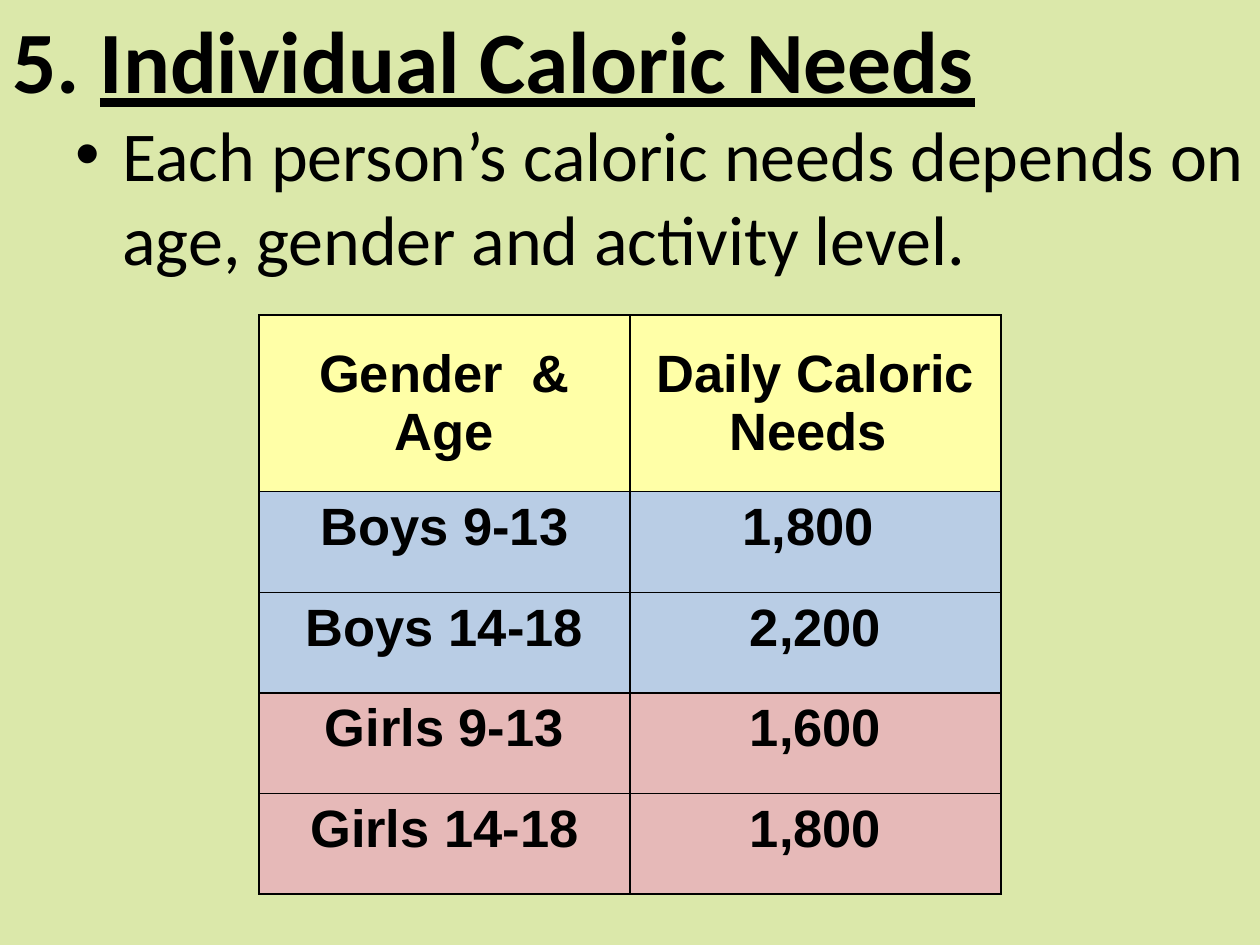
import pptx
import pptx.util
import pptx.dml.color
import pptx.enum.text
import pptx.oxml
import pptx.oxml.ns

Cm = pptx.util.Cm
Pt = pptx.util.Pt
RGB = pptx.dml.color.RGBColor
BLACK = RGB(0, 0, 0)
GREEN = RGB(0xDB, 0xE8, 0xAA)
YELLOW = RGB(0xFF, 0xFF, 0xA7)
BLUE = RGB(0xB9, 0xCD, 0xE5)
PINK = RGB(0xE6, 0xB9, 0xB8)
NS = pptx.oxml.ns.nsdecls("a")


def style(font, form):
    for key, val in form.items():
        setattr(font, key, val)
    font.color.rgb = BLACK


def border(cell):
    props = cell._tc.get_or_add_tcPr()
    for at, side in enumerate(("lnL", "lnR", "lnT", "lnB")):
        line = pptx.oxml.parse_xml(
            f'<a:{side} {NS} w="{Pt(1)}"><a:solidFill>'
            f'<a:srgbClr val="{BLACK}"/></a:solidFill></a:{side}>')
        props.insert(at, line)


# Slide
deck = pptx.Presentation()
deck.slide_width, deck.slide_height = Cm(25.4), Cm(19.05)
slide = deck.slides.add_slide(deck.slide_layouts[6])
slide.background.fill.solid()
slide.background.fill.fore_color.rgb = GREEN

# Heading and bullet
box = slide.shapes.add_textbox(Cm(0), Cm(0), Cm(25.4), Cm(5.82))
frame = box.text_frame
frame.word_wrap = True
head = {"name": "Calibri", "size": Pt(50), "bold": True}
body = {"name": "Calibri", "size": Pt(40), "bold": False}

title = frame.paragraphs[0]
for text, line in (("5. ", False), ("Individual Caloric Needs", True)):
    run = title.add_run()
    run.text = text
    style(run.font, head | {"underline": line})

point = frame.add_paragraph()
point.level = 1
run = point.add_run()
run.text = "Each person’s caloric needs depends on age, gender and activity level."
style(run.font, body)

# Hanging indents
for para, left in ((title, Cm(0.95)), (point, Cm(2.22))):
    props = para._p.get_or_add_pPr()
    props.set("marL", str(left))
    props.set("indent", str(-Cm(0.95)))
for tag in ('buFont {} typeface="Arial"', 'buChar {} char="•"'):
    props.append(pptx.oxml.parse_xml(f"<a:{tag.format(NS)}/>"))

# Calorie table
rows = (
    ("Gender  & Age", "Daily Caloric Needs ", YELLOW),
    ("Boys 9-13", "1,800 ", BLUE),
    ("Boys 14-18", "2,200", BLUE),
    ("Girls 9-13", "1,600", PINK),
    ("Girls 14-18", "1,800", PINK),
)
form = {"name": "Arial", "size": Pt(30), "bold": True}
table = slide.shapes.add_table(
    len(rows), 2, Cm(5.22), Cm(6.35), Cm(14.96), Cm(11.68)).table
for col in table.columns:
    col.width = Cm(7.48)
for r, (*texts, fill) in enumerate(rows):
    table.rows[r].height = Cm(2.03) if r else Cm(3.56)
    for c, text in enumerate(texts):
        cell = table.cell(r, c)
        cell.fill.solid()
        cell.fill.fore_color.rgb = fill
        if r == 0:
            cell.vertical_anchor = pptx.enum.text.MSO_ANCHOR.MIDDLE
        para = cell.text_frame.paragraphs[0]
        para.alignment = pptx.enum.text.PP_ALIGN.CENTER
        run = para.add_run()
        run.text = text
        style(run.font, form)
        border(cell)

deck.save("out.pptx")
